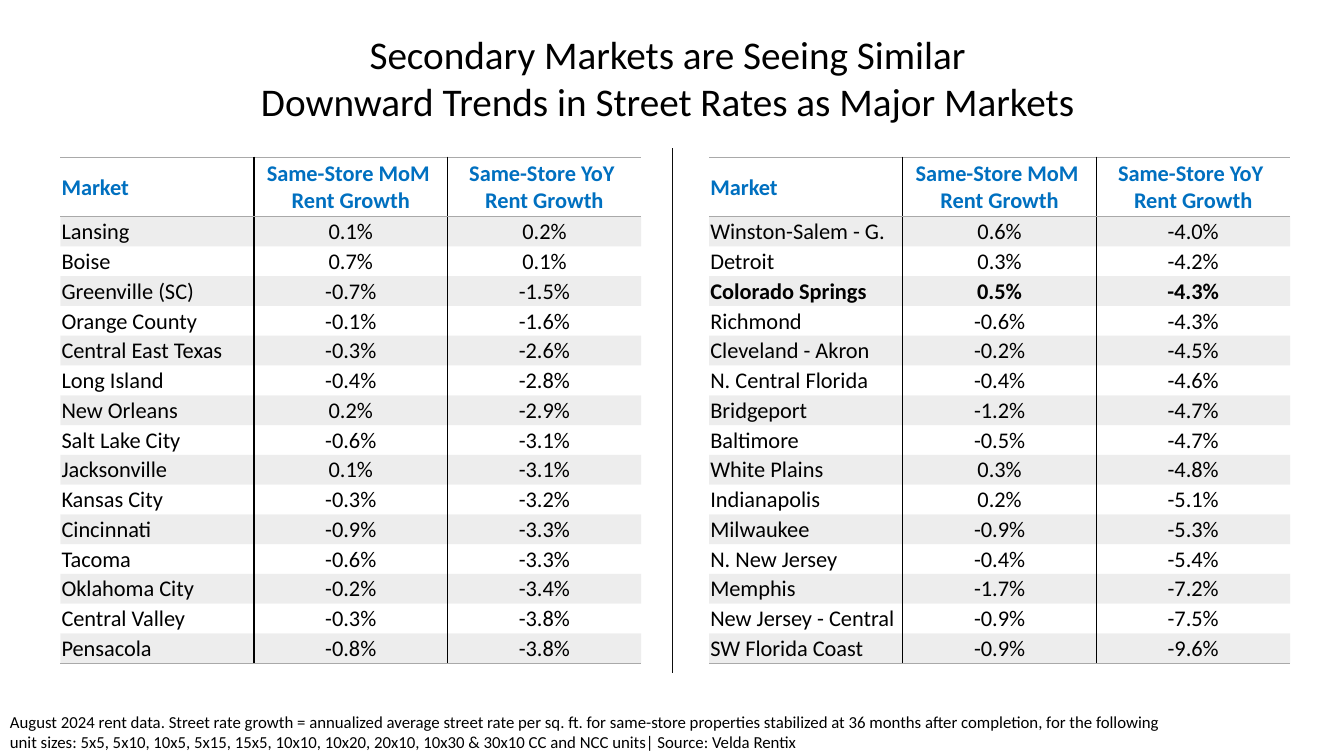
from lxml import etree
from pptx import Presentation
from pptx import util as u
from pptx.dml.color import RGBColor
from pptx.enum import shapes, text
from pptx.oxml.ns import qn

BLACK, BLUE, GRAY, DARK = "000000", "0070C0", "A9A9A9", "0D0D0D"
NO_TABLE_STYLE = "{2D5ABB26-0587-4C30-8999-92F81FD0307C}"
HEADINGS = ["Market", "Same-Store MoM \nRent Growth", "Same-Store YoY \nRent Growth"]
HIGHLIGHT = "Colorado Springs"

LEFT_MARKETS = [
    ("Lansing", "0.1%", "0.2%"),
    ("Boise", "0.7%", "0.1%"),
    ("Greenville (SC)", "-0.7%", "-1.5%"),
    ("Orange County", "-0.1%", "-1.6%"),
    ("Central East Texas", "-0.3%", "-2.6%"),
    ("Long Island", "-0.4%", "-2.8%"),
    ("New Orleans", "0.2%", "-2.9%"),
    ("Salt Lake City", "-0.6%", "-3.1%"),
    ("Jacksonville", "0.1%", "-3.1%"),
    ("Kansas City", "-0.3%", "-3.2%"),
    ("Cincinnati", "-0.9%", "-3.3%"),
    ("Tacoma", "-0.6%", "-3.3%"),
    ("Oklahoma City", "-0.2%", "-3.4%"),
    ("Central Valley", "-0.3%", "-3.8%"),
    ("Pensacola", "-0.8%", "-3.8%"),
]
RIGHT_MARKETS = [
    ("Winston-Salem - G.", "0.6%", "-4.0%"),
    ("Detroit", "0.3%", "-4.2%"),
    (HIGHLIGHT, "0.5%", "-4.3%"),
    ("Richmond", "-0.6%", "-4.3%"),
    ("Cleveland - Akron", "-0.2%", "-4.5%"),
    ("N. Central Florida", "-0.4%", "-4.6%"),
    ("Bridgeport", "-1.2%", "-4.7%"),
    ("Baltimore", "-0.5%", "-4.7%"),
    ("White Plains", "0.3%", "-4.8%"),
    ("Indianapolis", "0.2%", "-5.1%"),
    ("Milwaukee", "-0.9%", "-5.3%"),
    ("N. New Jersey", "-0.4%", "-5.4%"),
    ("Memphis", "-1.7%", "-7.2%"),
    ("New Jersey - Central", "-0.9%", "-7.5%"),
    ("SW Florida Coast", "-0.9%", "-9.6%"),
]


def color(value):
    return RGBColor.from_string(value)


def write(frame, content, *, size, font, fill=BLACK, bold=False, centered=False):
    for index, line in enumerate(content.split("\n")):
        paragraph = frame.paragraphs[0] if index == 0 else frame.add_paragraph()
        paragraph.alignment = text.PP_ALIGN.CENTER if centered else text.PP_ALIGN.LEFT
        run = paragraph.add_run()
        run.text = line
        run.font.name = font
        run.font.size = u.Pt(size)
        run.font.bold = bold
        run.font.color.rgb = color(fill)


class SlideBuilder:
    font = "Calibri"
    column_width = 4.88
    header_height = 1.5
    row_height = 0.75

    def __init__(self, slide):
        self.slide = slide

    def title(self, content, left, top, width, height):
        shape = self.slide.shapes.title
        shape.left, shape.top = u.Cm(left), u.Cm(top)
        shape.width, shape.height = u.Cm(width), u.Cm(height)
        frame = shape.text_frame
        frame.auto_size = text.MSO_AUTO_SIZE.NONE
        frame.vertical_anchor = text.MSO_ANCHOR.TOP
        write(frame, content, size=28, font=self.font, centered=True)

    def note(self, content, left, top, width, height):
        box = self.slide.shapes.add_textbox(u.Cm(left), u.Cm(top), u.Cm(width), u.Cm(height))
        box.text_frame.word_wrap = False
        write(box.text_frame, content, size=12, font=self.font)

    def line(self, x1, y1, x2, y2):
        connector = self.slide.shapes.add_connector(
            shapes.MSO_CONNECTOR.STRAIGHT, u.Cm(x1), u.Cm(y1), u.Cm(x2), u.Cm(y2))
        connector.line.color.rgb = color(DARK)
        connector.line.width = u.Pt(0.5)
        etree.SubElement(connector.element.spPr, qn("a:effectLst"))

    def border(self, cell, side, line_color):
        properties = cell._tc.get_or_add_tcPr()
        line = etree.SubElement(properties, qn(f"a:ln{side}"), w=str(u.Pt(1)))
        if line_color is None:
            etree.SubElement(line, qn("a:noFill"))
        else:
            fill = etree.SubElement(line, qn("a:solidFill"))
            etree.SubElement(fill, qn("a:srgbClr"), val=line_color)

    def shade(self, cell, shaded):
        if not shaded:
            cell.fill.background()
            return
        cell.fill.solid()
        cell.fill.fore_color.rgb = color(GRAY)
        tint = cell._tc.tcPr.find(qn("a:solidFill")).find(qn("a:srgbClr"))
        etree.SubElement(tint, qn("a:alpha"), val="20000")

    def market_table(self, markets, left, top):
        rows = [HEADINGS, *markets]
        last_row, last_column = len(markets), len(HEADINGS) - 1
        frame = self.slide.shapes.add_table(
            len(rows), len(HEADINGS), u.Cm(left), u.Cm(top),
            u.Cm(self.column_width * len(HEADINGS)),
            u.Cm(self.header_height + self.row_height * len(markets)))
        table = frame.table
        table.first_row = table.horz_banding = False
        next(frame.element.iter(qn("a:tableStyleId"))).text = NO_TABLE_STYLE
        for column in table.columns:
            column.width = u.Cm(self.column_width)
        for r, values in enumerate(rows):
            header = r == 0
            table.rows[r].height = u.Cm(self.header_height if header else self.row_height)
            for c, value in enumerate(values):
                cell = table.cell(r, c)
                cell.vertical_anchor = text.MSO_ANCHOR.MIDDLE
                cell.margin_left = cell.margin_right = cell.margin_top = u.Cm(0.03)
                cell.margin_bottom = 0
                write(cell.text_frame, value, size=16, font=self.font,
                      fill=BLUE if header else BLACK,
                      bold=header or values[0] == HIGHLIGHT, centered=c > 0)
                # Black rules between columns, gray ones around header and below
                self.border(cell, "L", BLACK if c > 0 else None)
                self.border(cell, "R", BLACK if c < last_column else None)
                self.border(cell, "T", GRAY if r <= 1 else None)
                self.border(cell, "B", GRAY if r in (0, last_row) else None)
                self.shade(cell, r % 2 == 1)


def main():
    presentation = Presentation()
    presentation.slide_width, presentation.slide_height = u.Cm(33.87), u.Cm(19.05)
    builder = SlideBuilder(presentation.slides.add_slide(presentation.slide_layouts[5]))

    # Title
    builder.title("Secondary Markets are Seeing Similar \n"
                  "Downward Trends in Street Rates as Major Markets ", 0, 0.64, 33.87, 2.67)

    # Market tables and the divider between them
    for markets, left in ((LEFT_MARKETS, 1.52), (RIGHT_MARKETS, 17.87)):
        builder.market_table(markets, left, 3.96)
    builder.line(16.94, 3.73, 16.94, 16.97)

    # Footnote
    builder.note("August 2024 rent data. Street rate growth = annualized average street rate "
                 "per sq. ft. for same-store properties stabilized at 36 months after "
                 "completion, for the following\n"
                 "unit sizes: 5x5, 5x10, 10x5, 5x15, 15x5, 10x10, 10x20, 20x10, 10x30 & 30x10 "
                 "CC and NCC units| Source: Velda Rentix", 0, 17.81, 29.51, 1.22)

    presentation.save("out.pptx")


if __name__ == "__main__":
    main()
